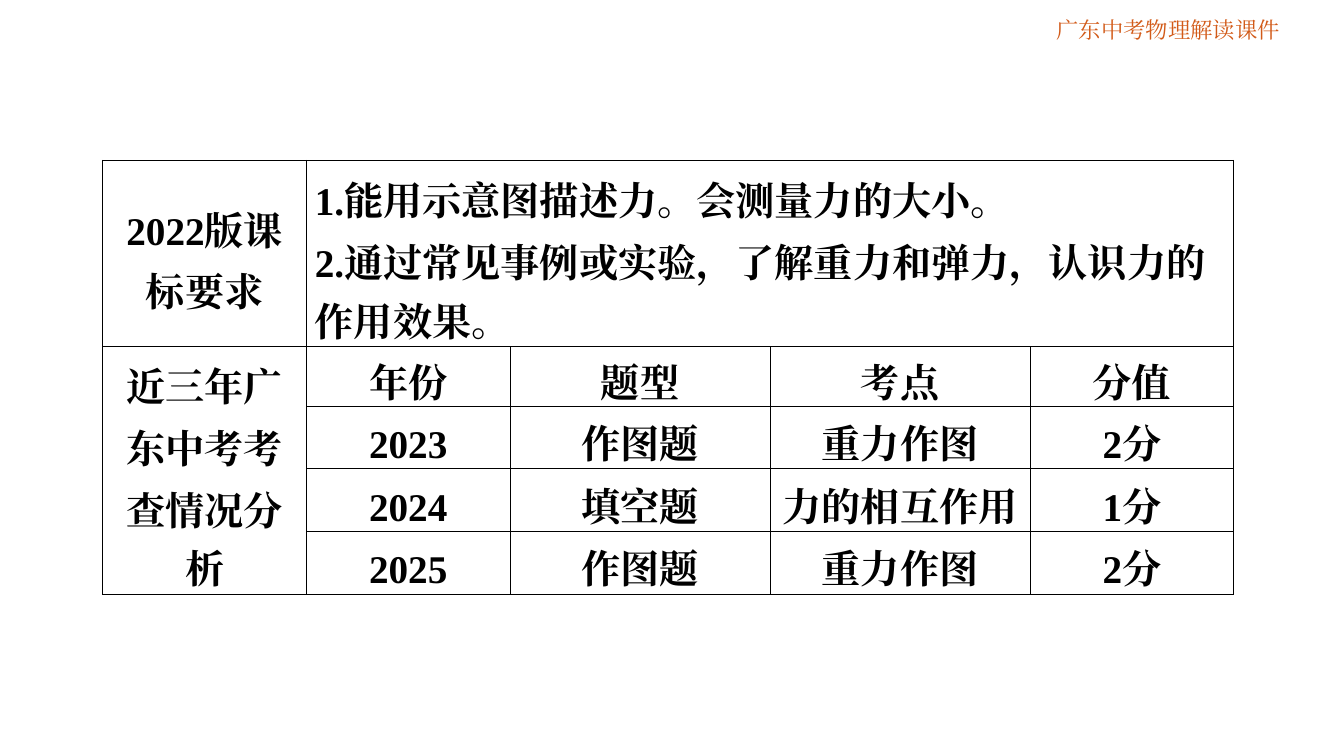
"""Build the slide with the curriculum requirements and exam analysis table."""
from itertools import groupby

from lxml.etree import SubElement
from pptx import Presentation
from pptx.dml.color import RGBColor
from pptx.enum.lang import MSO_LANGUAGE_ID
from pptx.enum.text import MSO_ANCHOR, PP_ALIGN
from pptx.oxml import parse_xml
from pptx.oxml.ns import nsdecls, qn
from pptx.util import Pt

COURSE = "广东中考物理解读课件"
STANDARD = [("2022版课", 44), ("标要求", 43)]
REQUIREMENTS = [
    ("1.能用示意图描述力。会测量力的大小。", 44),
    ("2.通过常见事例或实验，了解重力和弹力，认识力的", 44),
    ("作用效果。", 42),
]
ANALYSIS = [("近三年广", 44), ("东中考考", 44), ("查情况分", 44), ("析", 42)]
EXAMS = [
    ("年份", "题型", "考点", "分值"),
    ("2023", "作图题", "重力作图", "2分"),
    ("2024", "填空题", "力的相互作用", "1分"),
    ("2025", "作图题", "重力作图", "2分"),
]
COLUMN_WIDTHS = [145.4, 145.4, 185.8, 185.8, 145.4]
ROW_HEIGHTS = [133.2, 42.5, 44.8, 44.8, 44.8]
TABLE_LEFT, TABLE_TOP = 73.5, 114.5

BLACK = RGBColor(0x00, 0x00, 0x00)
ORANGE = RGBColor(0xD2, 0x5A, 0x18)
FACE = "Times New Roman"
LANGUAGE = MSO_LANGUAGE_ID.SIMPLIFIED_CHINESE
COURSE_FONT = {"name": FACE, "size": Pt(16), "bold": False, "language_id": LANGUAGE}
CELL_FONT = {"name": FACE, "size": Pt(28), "bold": True, "language_id": LANGUAGE}
CELL_FORMAT = {
    "margin_left": Pt(6), "margin_right": Pt(6), "margin_top": 0,
    "margin_bottom": 0, "vertical_anchor": MSO_ANCHOR.MIDDLE,
}
FRAME_FORMAT = {
    "margin_left": 0, "margin_right": 0, "margin_top": 0, "margin_bottom": 0,
    "vertical_anchor": MSO_ANCHOR.MIDDLE, "word_wrap": True,
}
PLAIN_TABLE = {"first_row": False, "horz_banding": False}


def apply(target, values):
    for key, value in values.items():
        setattr(target, key, value)


def add_run(paragraph, text, font_format, color):
    run = paragraph.add_run()
    run.text = text
    apply(run.font, font_format)
    run.font.color.rgb = color
    properties = run.font._element
    SubElement(properties, qn("a:ea")).set("typeface", FACE)
    return properties


def write_lines(cell, lines, alignment=PP_ALIGN.CENTER):
    for index, (line, spacing) in enumerate(lines):
        frame = cell.text_frame
        paragraph = frame.add_paragraph() if index else frame.paragraphs[0]
        apply(paragraph, {"alignment": alignment, "line_spacing": Pt(spacing)})
        for is_mark, letters in groupby(line, key=lambda letter: letter in "。，"):
            properties = add_run(paragraph, "".join(letters), CELL_FONT, BLACK)
            if is_mark:
                properties.set("spc", "-100")


def draw_borders(cell):
    properties = cell._tc.get_or_add_tcPr()
    for position, side in enumerate(("lnL", "lnR", "lnT", "lnB")):
        properties.insert(position, parse_xml(
            f'<a:{side} {nsdecls("a")} w="{Pt(0.75)}"><a:solidFill>'
            f'<a:srgbClr val="{BLACK}"/></a:solidFill></a:{side}>'))


def main():
    presentation = Presentation()
    apply(presentation, {"slide_width": Pt(960), "slide_height": Pt(540)})
    slide = presentation.slides.add_slide(presentation.slide_layouts[6])

    course = slide.shapes.add_textbox(Pt(721.5), Pt(10.8), Pt(226), Pt(20.2)).text_frame
    apply(course, FRAME_FORMAT)
    course.paragraphs[0].alignment = PP_ALIGN.CENTER
    add_run(course.paragraphs[0], COURSE, COURSE_FONT, ORANGE)

    table = slide.shapes.add_table(
        len(ROW_HEIGHTS), len(COLUMN_WIDTHS), Pt(TABLE_LEFT), Pt(TABLE_TOP),
        Pt(sum(COLUMN_WIDTHS)), Pt(sum(ROW_HEIGHTS))).table
    apply(table, PLAIN_TABLE)
    for column, width in zip(table.columns, COLUMN_WIDTHS):
        column.width = Pt(width)
    for row, height in zip(table.rows, ROW_HEIGHTS):
        row.height = Pt(height)
    for cell in table.iter_cells():
        apply(cell, CELL_FORMAT)
        cell.fill.background()
        draw_borders(cell)

    table.cell(0, 1).merge(table.cell(0, 4))
    table.cell(1, 0).merge(table.cell(4, 0))
    write_lines(table.cell(0, 0), STANDARD)
    write_lines(table.cell(0, 1), REQUIREMENTS, PP_ALIGN.LEFT)
    write_lines(table.cell(1, 0), ANALYSIS)
    for row_index, exam in enumerate(EXAMS, start=1):
        for column_index, entry in enumerate(exam, start=1):
            write_lines(table.cell(row_index, column_index), [(entry, 42)])

    presentation.save("out.pptx")


if __name__ == "__main__":
    main()
